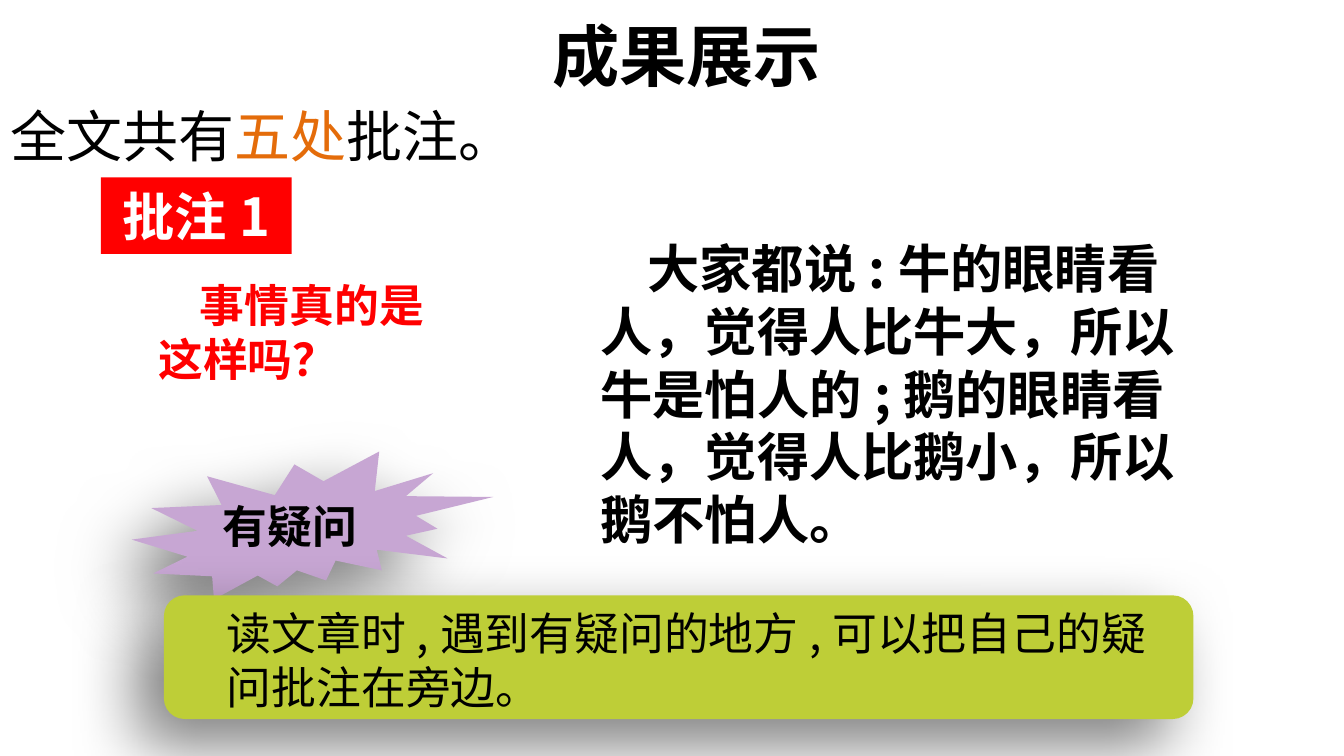
"""Build the lesson slide that presents the first margin note."""
from dataclasses import dataclass
from typing import Optional

from lxml import etree
from pptx import Presentation
from pptx.dml.color import RGBColor
from pptx.enum.shapes import MSO_SHAPE
from pptx.enum.text import MSO_ANCHOR, PP_ALIGN
from pptx.oxml.ns import qn
from pptx.util import Inches, Pt

RECT, ROUND_RECT, BURST = MSO_SHAPE.RECTANGLE, MSO_SHAPE.ROUNDED_RECTANGLE, MSO_SHAPE.EXPLOSION2
CENTER, MIDDLE = PP_ALIGN.CENTER, MSO_ANCHOR.MIDDLE
CJK = "Noto Sans CJK SC"
COLORS = {"black": "000000", "white": "FFFFFF", "red": "FF0000", "orange": "E46C0A",
          "purple": "C7A6D3", "green": "BECE37"}


@dataclass
class Box:
    left: float
    top: float
    width: float
    height: float

    def lengths(self) -> list:
        return [Inches(v) for v in (self.left, self.top, self.width, self.height)]


@dataclass
class Label:
    box: Box
    runs: list[tuple[str, str]]
    size: int
    bold: bool = True
    font: str = CJK
    indent: float = 0
    wrap: bool = True


def write(tf, label: Label) -> None:
    tf.word_wrap = label.wrap
    p = tf.paragraphs[0]
    if label.indent:
        pPr = p._p.get_or_add_pPr()
        pPr.set("marL", "0")
        pPr.set("indent", str(Inches(label.indent)))
    for text, color in label.runs:
        r = p.add_run()
        r.text = text
        r.font.size = Pt(label.size)
        r.font.bold = label.bold
        r.font.color.rgb = RGBColor.from_string(COLORS[color])
        r.font.name = label.font
        etree.SubElement(r._r.get_or_add_rPr(), qn("a:ea"), typeface=CJK)


def add_label(shapes, label: Label) -> None:
    write(shapes.add_textbox(*label.box.lengths()).text_frame, label)


def add_panel(shapes, kind, box: Box, color: str, label: Optional[Label] = None):
    sp = shapes.add_shape(kind, *box.lengths())
    sp.shadow.inherit = False
    sp.fill.solid()
    sp.fill.fore_color.rgb = RGBColor.from_string(COLORS[color])
    sp.line.fill.background()
    if label:
        write(sp.text_frame, label)
        sp.text_frame.vertical_anchor = MIDDLE
        sp.text_frame.paragraphs[0].alignment = CENTER
    return sp


def add_shadow(sp) -> None:
    effects = sp._element.spPr.find(qn("a:effectLst"))
    shadow = etree.SubElement(effects, qn("a:outerShdw"), blurRad=str(Pt(35)),
                              dist=str(Pt(20)), dir=str(135 * 60000), algn="tr", rotWithShape="0")
    color = etree.SubElement(shadow, qn("a:srgbClr"), val=COLORS["black"])
    etree.SubElement(color, qn("a:alpha"), val="50000")


def add_callout(shapes, kind, box: Box, color: str, label: Label) -> None:
    group = shapes.add_group_shape()
    add_shadow(add_panel(group.shapes, kind, box, color))
    add_label(group.shapes, label)


def main() -> None:
    prs = Presentation()
    prs.slide_width = Inches(10)
    prs.slide_height = prs.slide_width * 9 // 16
    s = prs.slides.add_slide(prs.slide_layouts[6])

    add_label(s.shapes, Label(
        Box(-0.02, 0.71, 8.64, 0.61),
        [("全文共有", "black"), ("五处", "orange"), ("批注。", "black")], 30, bold=False))
    add_label(s.shapes, Label(
        Box(4.37, 1.71, 4.72, 2.46),
        [("大家都说:牛的眼睛看人，觉得人比牛大，所以牛是怕人的;鹅的眼睛看人，觉得人比鹅小，所以鹅不怕人。",
          "black")], 28, indent=0.35))
    add_callout(s.shapes, BURST, Box(0.98, 3.36, 2.69, 1.1), "purple", Label(
        Box(1.56, 3.66, 1.22, 0.5), [("有疑问", "black")], 24, wrap=False))
    add_label(s.shapes, Label(
        Box(1.08, 2.02, 2.5, 0.91), [("事情真的是这样吗？", "red")], 24, indent=0.31))
    tag = Box(0.75, 1.32, 1.42, 0.57)
    add_panel(s.shapes, RECT, tag, "red", Label(tag, [("批注1", "white")], 28))
    add_label(s.shapes, Label(
        Box(4.01, 0.06, 2.27, 0.71), [("成果展示", "black")], 36, font="Arial"))
    add_callout(s.shapes, ROUND_RECT, Box(1.22, 4.43, 7.66, 0.92), "green", Label(
        Box(1.59, 4.46, 7.34, 0.91),
        [("读文章时,遇到有疑问的地方,可以把自己的疑问批注在旁边。", "black")], 24, bold=False))

    prs.save("out.pptx")


if __name__ == "__main__":
    main()
